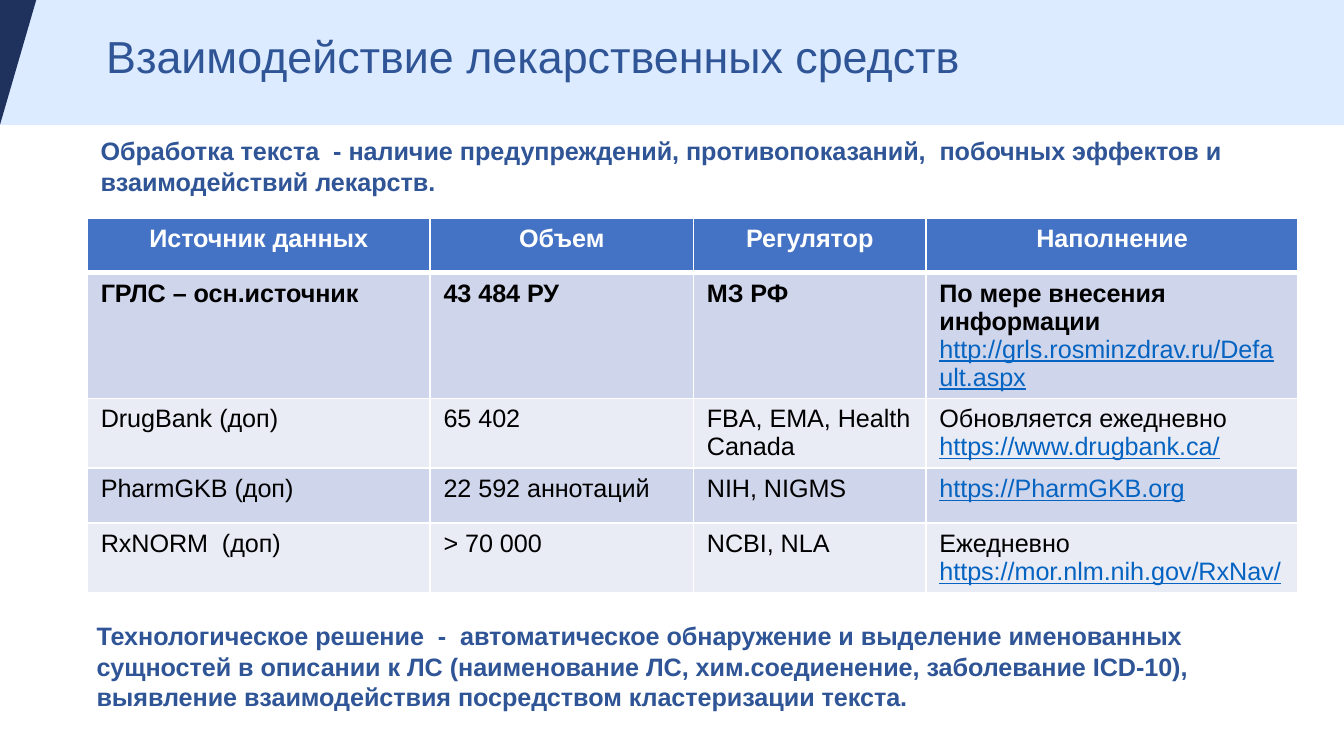
from dataclasses import dataclass

from pptx import Presentation
from pptx.dml.color import RGBColor
from pptx.enum.shapes import MSO_SHAPE
from pptx.enum.text import MSO_ANCHOR, MSO_AUTO_SIZE, PP_ALIGN
from pptx.oxml import parse_xml
from pptx.oxml.ns import nsdecls
from pptx.util import Inches, Pt


@dataclass(frozen=True)
class Theme:
    """Colours and type sizes of the slide."""
    font: str = "Arial"
    title_size: float = 24
    text_size: float = 13.5
    heading: str = "2F5597"
    text: str = "000000"
    link: str = "0563C1"
    white: str = "FFFFFF"
    band: str = "DCEBFF"
    wedge: str = "1F325E"
    header: str = "4472C4"
    rows: tuple = ("CFD5EA", "E9EBF5")


class SlideBuilder:
    """Holds the theme and the current slide."""

    def __init__(self, prs, theme):
        """Add a slide with a title placeholder."""
        self.theme = theme
        self.s = prs.slides.add_slide(prs.slide_layouts[5])

    def run(self, p, text, color, size=None, **formats):
        """Add a formatted run to a paragraph."""
        r = p.add_run()
        r.text = text
        formats = {"name": self.theme.font, "size": Pt(size or self.theme.text_size), **formats}
        for name, value in formats.items():
            setattr(r.font, name, value)
        r.font.color.rgb = RGBColor.from_string(color)

    def paint(self, sp, color):
        """Give a shape a plain fill without line or shadow."""
        sp.shadow.inherit = False
        sp.fill.solid()
        sp.fill.fore_color.rgb = RGBColor.from_string(color)
        sp.line.fill.background()

    def band(self, width, height):
        """Draw the band across the top."""
        sp = self.s.shapes.add_shape(MSO_SHAPE.RECTANGLE, 0, 0, Inches(width), Inches(height))
        self.paint(sp, self.theme.band)

    def wedge(self, width, height):
        """Draw the dark wedge in the top left corner."""
        fb = self.s.shapes.build_freeform(0, 0)
        fb.add_line_segments([(Inches(width), 0), (0, Inches(height))], close=True)
        self.paint(fb.convert_to_shape(), self.theme.wedge)

    def title(self, text, *box):
        """Fill the title placeholder and bring it to the front."""
        sp = self.s.shapes.title
        sp.element.getparent().append(sp.element)
        sp.left, sp.top, sp.width, sp.height = map(Inches, box)
        sp.text_frame.vertical_anchor = MSO_ANCHOR.TOP
        sp.text_frame.auto_size = MSO_AUTO_SIZE.NONE
        p = sp.text_frame.paragraphs[0]
        p.alignment, p.line_spacing = PP_ALIGN.LEFT, 0.9
        self.run(p, text, self.theme.heading, self.theme.title_size)

    def note(self, text, *box):
        """Add a bold wrapped text box."""
        tf = self.s.shapes.add_textbox(*map(Inches, box)).text_frame
        tf.word_wrap = True
        tf.auto_size = MSO_AUTO_SIZE.SHAPE_TO_FIT_TEXT
        self.run(tf.paragraphs[0], text, self.theme.heading, bold=True)

    def cell(self, cell, fill, bottom):
        """Set the borders and fill of a table cell."""
        for side, width in {"L": 1, "R": 1, "T": 1, "B": bottom}.items():
            cell._tc.get_or_add_tcPr().append(parse_xml(
                f'<a:ln{side} {nsdecls("a")} w="{Pt(width)}"><a:solidFill>'
                f'<a:srgbClr val="{self.theme.white}"/></a:solidFill></a:ln{side}>'))
        cell.fill.solid()
        cell.fill.fore_color.rgb = RGBColor.from_string(fill)

    def table(self, left, top, widths, heights, header, rows):
        """Add a table whose last column may end in a web address."""
        t = self.theme
        table = self.s.shapes.add_table(
            len(heights), len(widths), Inches(left), Inches(top),
            Inches(sum(widths)), Inches(sum(heights))).table
        for column, width in zip(table.columns, widths):
            column.width = Inches(width)
        for row, height in zip(table.rows, heights):
            row.height = Inches(height)
        for c, text in enumerate(header):
            cell = table.cell(0, c)
            self.cell(cell, t.header, 3)
            p = cell.text_frame.paragraphs[0]
            p.alignment = PP_ALIGN.CENTER
            self.run(p, text, t.white, bold=True)
        for i, (*texts, url) in enumerate(rows):
            for c, text in enumerate(texts):
                cell = table.cell(i + 1, c)
                self.cell(cell, t.rows[i % 2], 1)
                p = cell.text_frame.paragraphs[0]
                if text:
                    self.run(p, text, t.text, bold=i == 0)
            self.run(p, url, t.link, bold=False, underline=True)


HEADER = ["Источник данных", "Объем", "Регулятор", "Наполнение"]
SOURCES = [
    ("ГРЛС – осн.источник", "43 484 РУ", "МЗ РФ", "По мере внесения информации ",
     "http://grls.rosminzdrav.ru/Default.aspx"),
    ("DrugBank (доп)", "65 402", "FBA, EMA, Health Canada", "Обновляется ежедневно ",
     "https://www.drugbank.ca/"),
    ("PharmGKB (доп)", "22 592 аннотаций", "NIH, NIGMS", "", "https://PharmGKB.org"),
    ("RxNORM  (доп)", "> 70 000", "NCBI, NLA", "Ежедневно ",
     "https://mor.nlm.nih.gov/RxNav/"),
]


def main():
    """Build the slide and save it."""
    prs = Presentation()
    prs.slide_width = Inches(10)
    prs.slide_height = prs.slide_width * 9 // 16
    b = SlideBuilder(prs, Theme())
    b.band(10, 0.93)
    b.wedge(0.27, 0.93)
    b.title("Взаимодействие лекарственных средств", 0.69, 0.21, 7.89, 0.5)
    b.table(0.65, 1.62, [2.55, 1.96, 1.73, 2.77], [0.41] * 5, HEADER, SOURCES)
    b.note("Обработка текста  - наличие предупреждений, противопоказаний,  побочных эффектов "
           "и взаимодействий лекарств.", 0.65, 0.96, 9.09, 0.78)
    b.note("Технологическое решение  -  автоматическое обнаружение и выделение именованных "
           "сущностей в описании к ЛС (наименование ЛС, хим.соедиенение, заболевание ICD-10), "
           "выявление взаимодействия посредством кластеризации текста.", 0.62, 4.57, 9.09, 1.01)
    prs.save("out.pptx")


if __name__ == "__main__":
    main()
